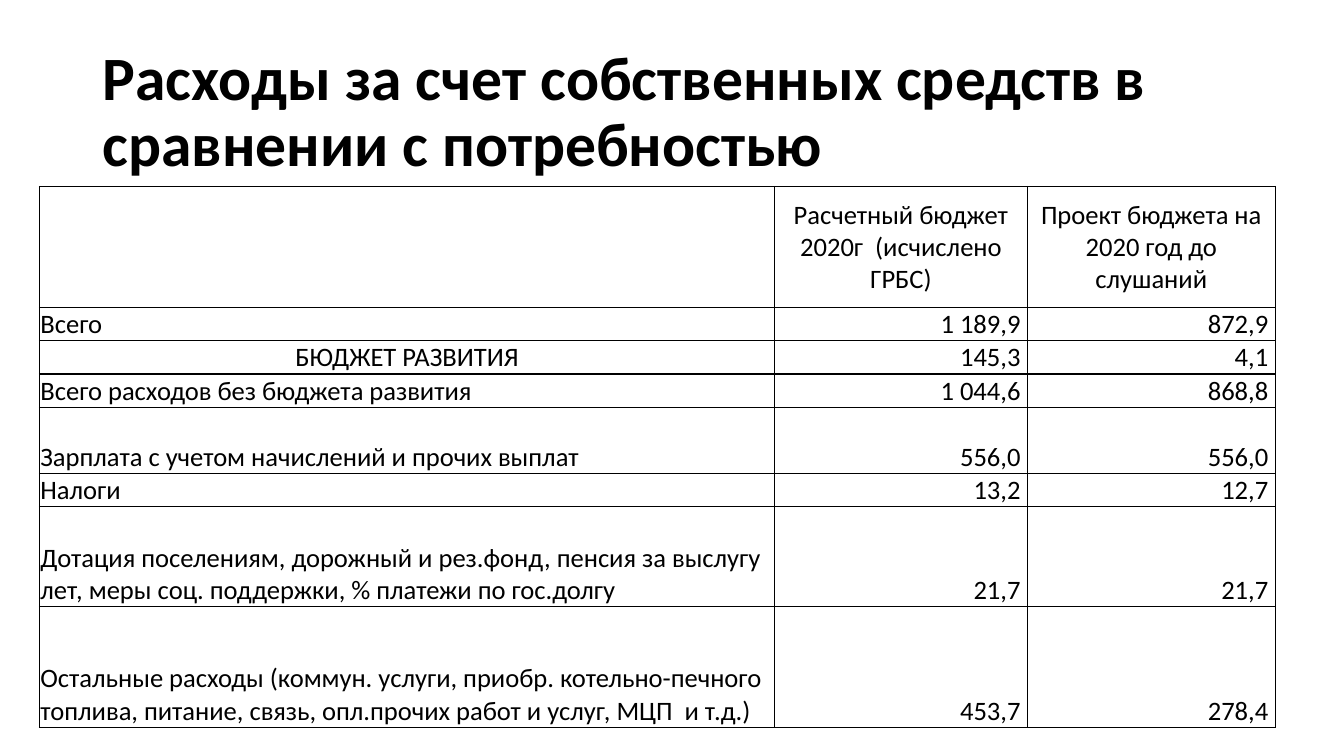
from dataclasses import dataclass

from lxml import etree
from pptx import Presentation
from pptx.dml.color import RGBColor
from pptx.enum.text import MSO_ANCHOR, MSO_AUTO_SIZE, PP_ALIGN
from pptx.oxml.ns import qn
from pptx.util import Pt

LEFT, MID, RIGHT = PP_ALIGN.LEFT, PP_ALIGN.CENTER, PP_ALIGN.RIGHT
CENTER, BOTTOM = MSO_ANCHOR.MIDDLE, MSO_ANCHOR.BOTTOM
FIXED = MSO_AUTO_SIZE.NONE

TITLE = "Расходы за счет собственных средств в сравнении с потребностью"
HEADS = ("", "Расчетный бюджет 2020г  (исчислено ГРБС)",
         "Проект бюджета на 2020 год до слушаний")
GROWTH = "БЮДЖЕТ РАЗВИТИЯ"
UNIT, TALL = 23.7, 86.4
COSTS = (
    (UNIT, "Всего", "1 189,9 ", "872,9 "),
    (UNIT, GROWTH, "145,3 ", "4,1 "),
    (UNIT, "Всего расходов без бюджета развития", "1 044,6 ", "868,8 "),
    (2 * UNIT, "Зарплата с учетом начислений и прочих выплат", "556,0 ", "556,0 "),
    (UNIT, "Налоги", "13,2 ", "12,7 "),
    (3 * UNIT, "Дотация поселениям, дорожный и рез.фонд, пенсия за выслугу лет, "
     "меры соц. поддержки, % платежи по гос.долгу", "21,7 ", "21,7 "),
    (TALL, "Остальные расходы (коммун. услуги, приобр. котельно-печного топлива, "
     "питание, связь, опл.прочих работ и услуг, МЦП  и т.д.)", "453,7 ", "278,4 "),
)


@dataclass
class Theme:
    font: str = "Calibri"
    ink: str = "000000"
    paper: str = "FFFFFF"
    head: float = 44
    body: float = 19
    rule: float = 1


def apply(target, values):
    for name, value in values.items():
        setattr(target, name, value)


class Page:
    def __init__(self, slide, theme):
        self.slide = slide
        self.theme = theme

    def label(self, frame, text, size, align, bold=False):
        para = frame.paragraphs[0]
        para.alignment = align
        run = para.add_run()
        run.text = text
        apply(run.font, {"name": self.theme.font, "size": Pt(size), "bold": bold})
        run.font.color.rgb = RGBColor.from_string(self.theme.ink)
        return para

    def title(self, text, box):
        shape = self.slide.shapes.title
        apply(shape, dict(zip(("left", "top", "width", "height"), map(Pt, box))))
        frame = shape.text_frame
        apply(frame, {"word_wrap": True, "auto_size": FIXED,
                      "vertical_anchor": CENTER})
        para = self.label(frame, text, self.theme.head, LEFT, True)
        para.line_spacing = 0.9

    def border(self, cell):
        props = cell._tc.get_or_add_tcPr()
        for spot, side in enumerate(("lnL", "lnR", "lnT", "lnB")):
            line = etree.Element(qn(f"a:{side}"), w=str(Pt(self.theme.rule)))
            fill = etree.SubElement(line, qn("a:solidFill"))
            etree.SubElement(fill, qn("a:srgbClr"), val=self.theme.ink)
            props.insert(spot, line)

    def cell(self, cell, text, align, anchor):
        apply(cell, {"margin_left": Pt(0.7), "margin_right": Pt(0.7),
                     "margin_top": Pt(0.7), "margin_bottom": 0,
                     "vertical_anchor": anchor})
        cell.fill.solid()
        cell.fill.fore_color.rgb = RGBColor.from_string(self.theme.paper)
        self.border(cell)
        if text:
            self.label(cell.text_frame, text, self.theme.body, align)

    def table(self, left, top, widths, rows):
        high = sum(row[0] for row in rows)
        grid = self.slide.shapes.add_table(
            len(rows), len(widths), Pt(left), Pt(top), Pt(sum(widths)), Pt(high)).table
        apply(grid, {"first_row": False, "horz_banding": False})
        for col, width in zip(grid.columns, widths):
            col.width = Pt(width)
        for r, (height, *texts) in enumerate(rows):
            grid.rows[r].height = Pt(height)
            for c, text in enumerate(texts):
                if r == 0 or text == GROWTH:
                    align = MID
                else:
                    align = RIGHT if c else LEFT
                self.cell(grid.cell(r, c), text, align, BOTTOM if r else CENTER)


def main():
    deck = Presentation()
    apply(deck, {"slide_width": Pt(960), "slide_height": Pt(540)})
    page = Page(deck.slides.add_slide(deck.slide_layouts[5]), Theme())
    page.title(TITLE, (66, 28.8, 828, 104.4))
    page.table(28.2, 133.2, (525, 180.7, 177), ((TALL, *HEADS), *COSTS))
    deck.save("out.pptx")


if __name__ == "__main__":
    main()
